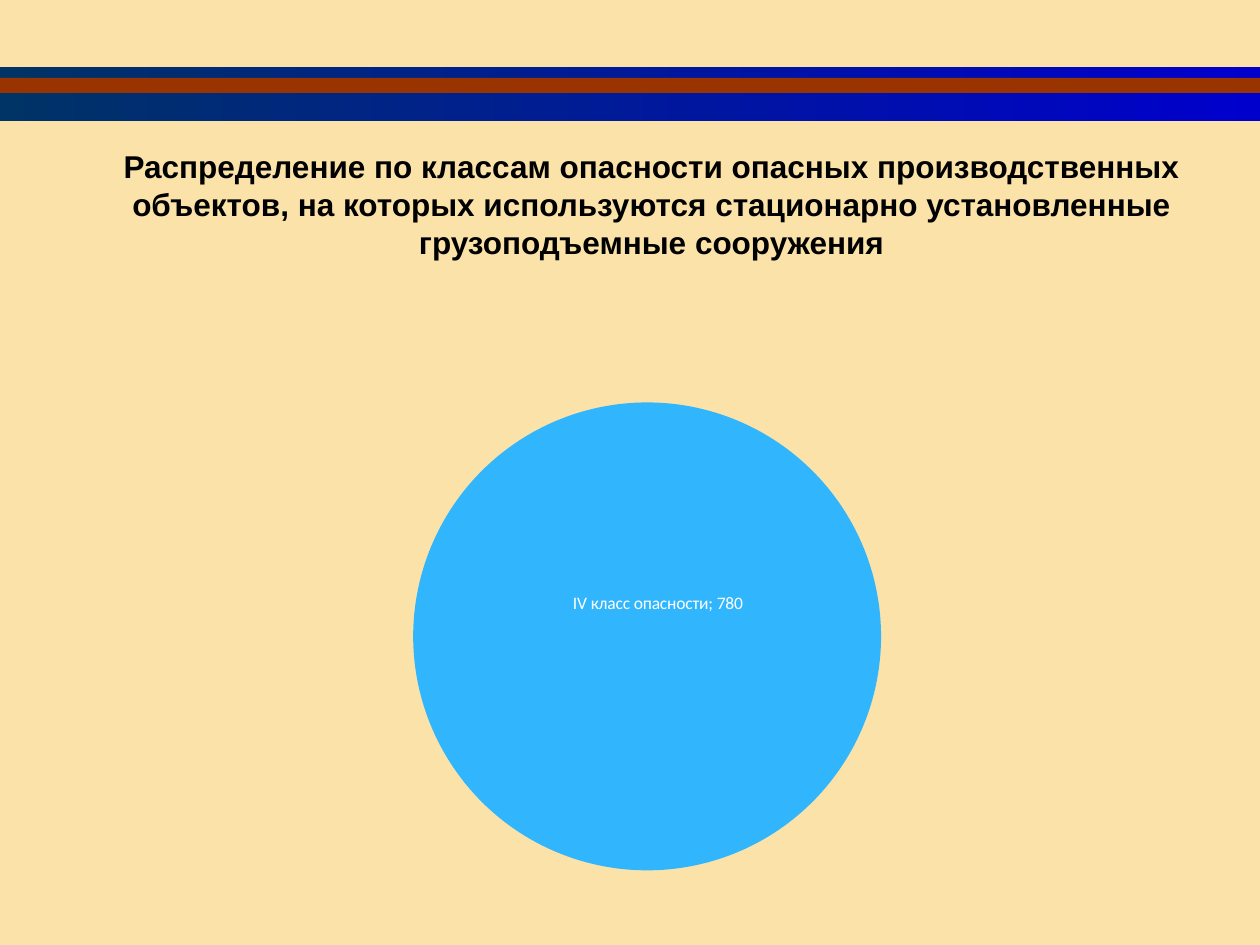
from lxml.etree import SubElement as Sub
from pptx import Presentation
from pptx.chart.data import CategoryChartData as Data
from pptx.dml.color import RGBColor as Rgb
from pptx.enum.chart import XL_CHART_TYPE as Kind, XL_LABEL_POSITION as Spot
from pptx.enum.shapes import MSO_SHAPE as Form
from pptx.enum.text import PP_ALIGN as Align
from pptx.oxml.ns import qn
from pptx.util import Pt


class Theme:
    page = Rgb(0xFB, 0xE2, 0xA9)
    navy = Rgb(0x00, 0x33, 0x66)
    blue = Rgb(0x00, 0x00, 0xCC)
    rust = Rgb(0x99, 0x33, 0x00)
    ink = Rgb(0x00, 0x00, 0x00)
    pie = Rgb(0x31, 0xB6, 0xFD)
    label = Rgb(0xFF, 0xFF, 0xFF)
    head_font, head_size = "Arial", Pt(18)
    label_font, label_size = "Calibri", Pt(10)


WIDE, HIGH = 1260, 945
TITLE = ("Распределение по классам опасности опасных производственных "
         "объектов, на которых используются стационарно установленные "
         "грузоподъемные сооружения")


def px(num):
    return round(num * 914400 / 126)


def add_band(slide, top, high, start, end=None):
    """Full-width stripe, shaded left to right when an end colour is given."""
    band = slide.shapes.add_shape(
        Form.RECTANGLE, 0, px(top), px(WIDE), px(high))
    band.shadow.inherit = False
    band.line.fill.background()
    if end is None:
        band.fill.solid()
        band.fill.fore_color.rgb = start
        return
    band.fill.gradient()
    band.fill.gradient_angle = 0
    for stop, tint in zip(band.fill.gradient_stops, (start, end)):
        stop.color.rgb = tint


def set_font(font, name, size, tint, bold=False):
    font.name, font.size, font.bold = name, size, bold
    font.color.rgb = tint


def add_title(slide, text, *box):
    frame = slide.shapes.add_textbox(*map(px, box)).text_frame
    frame.word_wrap = True
    para = frame.paragraphs[0]
    para.alignment = Align.CENTER
    run = para.add_run()
    run.text = text
    set_font(run.font, Theme.head_font, Theme.head_size, Theme.ink, True)


def add_layout(parent, **vals):
    """Manual chart layout; returns the layout element."""
    layout = Sub(parent, qn("c:layout"))
    inner = Sub(layout, qn("c:manualLayout"))
    for tag, val in vals.items():
        Sub(inner, qn("c:" + tag)).set("val", str(val))
    return layout


def add_pie(slide, cats, vals, *box):
    data = Data()
    data.categories = cats
    data.add_series("Series 1", vals)
    chart = slide.shapes.add_chart(Kind.PIE, *map(px, box), data).chart
    chart.has_legend = chart.has_title = False
    set_font(chart.font, Theme.label_font, Theme.label_size, Theme.label)
    plot = chart.plots[0]
    plot.vary_by_categories = False
    plot.has_data_labels = True
    plot.data_labels.show_value = True
    plot.data_labels.show_category_name = True

    point = plot.series[0].points[0]
    point.format.fill.solid()
    point.format.fill.fore_color.rgb = Theme.pie
    point.format.line.fill.background()
    label = point.data_label
    set_font(label.font, Theme.label_font, Theme.label_size, Theme.label)
    label.position = Spot.CENTER
    place_pie(chart.element)


def place_pie(root):
    """Explode the slice, size the plot and move the label up."""
    area = root.find(".//" + qn("c:plotArea"))
    for old in area.findall(qn("c:layout")):
        area.remove(old)
    area.insert(0, add_layout(
        area, layoutTarget="inner", xMode="edge", yMode="edge",
        x=0.22, y=0.03, w=0.55, h=0.9))

    slot = area.find(".//" + qn("c:dPt"))
    burst = Sub(slot.getparent(), qn("c:explosion"))
    burst.set("val", "25")
    slot.addprevious(burst)

    label = area.find(".//" + qn("c:dLbl"))
    label.find(qn("c:showCatName")).set("val", "1")
    label.insert(1, add_layout(label, x=0.01, y=-0.23))
    Sub(label, qn("c:separator")).text = "; "


def main():
    deck = Presentation()
    deck.slide_width, deck.slide_height = px(WIDE), px(HIGH)
    slide = deck.slides.add_slide(deck.slide_layouts[6])
    slide.background.fill.solid()
    slide.background.fill.fore_color.rgb = Theme.page
    add_band(slide, 67, 11, Theme.navy, Theme.blue)
    add_band(slide, 88, 33, Theme.navy, Theme.blue)
    add_band(slide, 78, 15, Theme.rust)
    add_title(slide, TITLE, 107, 141, 1089, 127)
    add_pie(slide, ["IV класс опасности"], [780], 118, 266, 1069, 650)
    deck.save("out.pptx")


if __name__ == "__main__":
    main()
